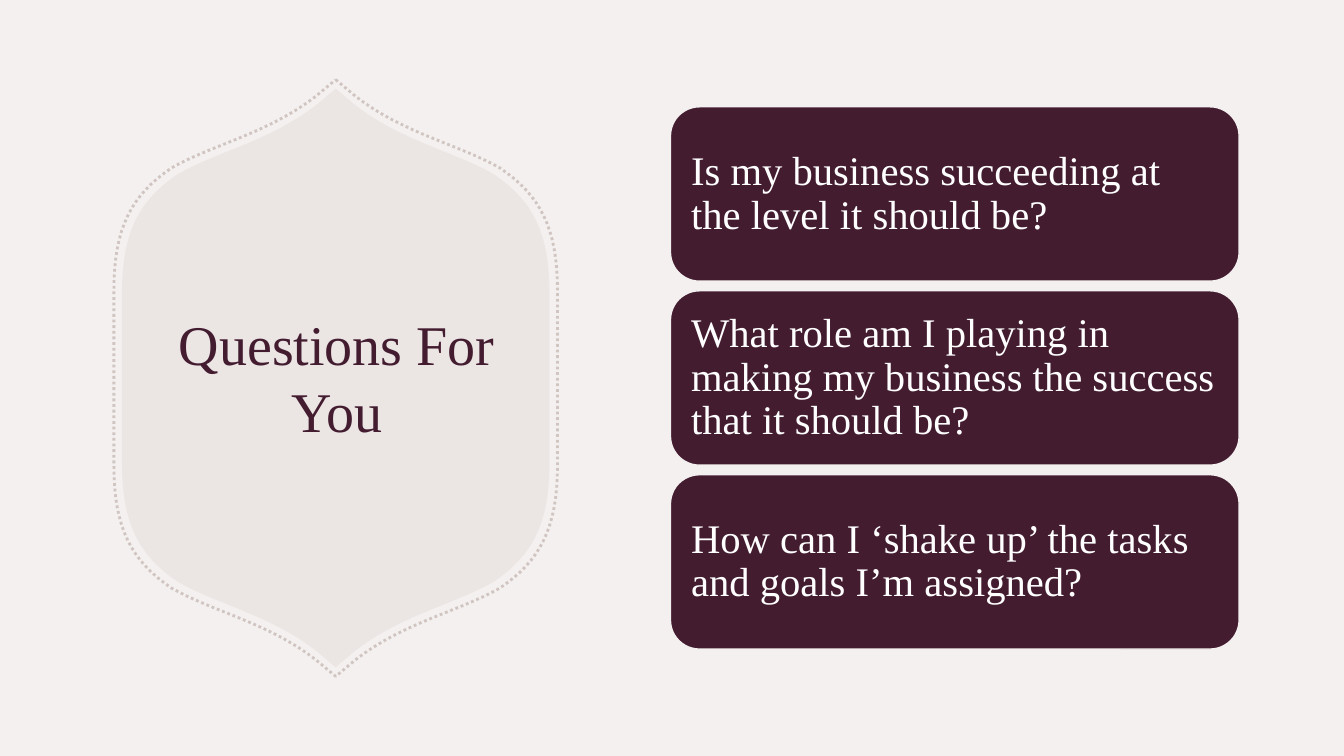
from lxml import etree
from pptx import Presentation
from pptx.dml.color import RGBColor
from pptx.enum import dml, shapes, text
from pptx.oxml import ns
from pptx.util import Inches, Pt

TITLE = "Questions For You"
QUESTIONS = [
    "Is my business succeeding at the level it should be?",
    "What role am I playing in making my business the success that it should be?",
    "How can I ‘shake up’ the tasks and goals I’m assigned?",
]

PALE = RGBColor(0xF3, 0xF0, 0xEF)
TAUPE = RGBColor(0xBF, 0xAF, 0xAA)
PLUM = RGBColor(0x43, 0x1C, 0x30)
WHITE = RGBColor(0xFF, 0xFF, 0xFF)
FONT = "Times New Roman"

# Badge geometry in inches; the quarter runs from the top tip to the right side
BADGE_CENTRE = (3.33, 3.75)
BADGE_HALF = (2.12, 2.87)
BORDER_HALF = (2.2, 2.96)
TIP = (0, -2.87)
QUARTER_CURVES = [
    [(0.19, -2.71), (0.65, -2.35), (1.17, -2.25), (1.57, -2.02)],
    [(1.57, -2.02), (1.95, -1.76), (2.12, -1.45), (2.12, -0.84)],
]
CURVE_STEPS = 16

TITLE_BOX = (1.6, 2.11, 3.48, 3.26)
CARD_LEFT, CARD_WIDTH, CARD_HEIGHT = 6.65, 5.64, 1.73
FIRST_TOP, LAST_TOP = 1.06, 4.71


def curve_points(curve):
    """Sample a cubic Bézier curve."""
    for step in range(CURVE_STEPS + 1):
        t = step / CURVE_STEPS
        weights = ((1 - t) ** 3, 3 * t * (1 - t) ** 2, 3 * t * t * (1 - t), t ** 3)
        yield tuple(sum(w * p[axis] for w, p in zip(weights, curve)) for axis in (0, 1))


def add_badge(slide, half):
    """Mirror the quarter outline into a closed badge with the given half size."""
    quarter = [TIP] + [p for curve in QUARTER_CURVES for p in curve_points(curve)]
    right = quarter + [(x, -y) for x, y in reversed(quarter)]
    outline = right + [(-x, y) for x, y in reversed(right[1:-1])]
    points = [
        tuple(Inches(c + v * h / base)
              for c, v, h, base in zip(BADGE_CENTRE, p, half, BADGE_HALF))
        for p in outline
    ]
    builder = slide.shapes.build_freeform(*points[0], scale=1)
    builder.add_line_segments(points[1:], close=True)
    badge = builder.convert_to_shape()
    badge.shadow.inherit = False
    return badge


def set_opacity(fill, percent):
    """Give a solid fill its opacity; python-pptx has no property for it."""
    colour = fill._xPr.find(ns.qn("a:solidFill"))[0]
    etree.SubElement(colour, ns.qn("a:alpha")).set("val", str(percent * 1000))


def write(shape, wording, font, frame_format, paragraph_format):
    frame = shape.text_frame
    frame.text = wording
    paragraph = frame.paragraphs[0]
    font_format = {"name": FONT, "size": Pt(font[0])}
    for target, values in ((frame, frame_format), (paragraph, paragraph_format),
                           (paragraph.runs[0].font, font_format)):
        for name, value in values.items():
            setattr(target, name, value)
    paragraph.runs[0].font.color.rgb = font[1]


def main():
    deck = Presentation()
    deck.slide_width, deck.slide_height = Inches(13.33), Inches(7.5)
    slide = deck.slides.add_slide(deck.slide_layouts[5])
    slide.background.fill.solid()
    slide.background.fill.fore_color.rgb = PALE

    badge = add_badge(slide, BADGE_HALF)
    badge.fill.solid()
    badge.fill.fore_color.rgb = TAUPE
    set_opacity(badge.fill, 15)
    badge.line.fill.background()

    border = add_badge(slide, BORDER_HALF)
    border.fill.background()
    border.line.width = Pt(2)
    border.line.color.rgb = TAUPE
    set_opacity(border.line.fill, 65)
    border.line.dash_style = dml.MSO_LINE.ROUND_DOT

    title = slide.shapes.title
    title.left, title.top, title.width, title.height = map(Inches, TITLE_BOX)
    slide.shapes.element.append(title.element)  # in front of the badge
    middle = {"vertical_anchor": text.MSO_ANCHOR.MIDDLE, "word_wrap": True,
              "auto_size": text.MSO_AUTO_SIZE.NONE}
    write(title, TITLE, (40, PLUM), middle, {"alignment": text.PP_ALIGN.CENTER})

    insets = {f"margin_{side}": Inches(0.12) for side in ("left", "top", "right", "bottom")}
    pitch = (LAST_TOP - FIRST_TOP) / (len(QUESTIONS) - 1)
    for row, question in enumerate(QUESTIONS):
        card = slide.shapes.add_shape(
            shapes.MSO_SHAPE.ROUNDED_RECTANGLE, Inches(CARD_LEFT),
            Inches(FIRST_TOP + row * pitch), Inches(CARD_WIDTH), Inches(CARD_HEIGHT))
        card.shadow.inherit = False
        card.fill.solid()
        card.fill.fore_color.rgb = PLUM
        card.line.color.rgb = PALE
        card.line.width = Pt(1)
        write(card, question, (29, WHITE), {**middle, **insets},
              {"alignment": text.PP_ALIGN.LEFT, "line_spacing": 0.9})

    deck.save("out.pptx")


if __name__ == "__main__":
    main()
